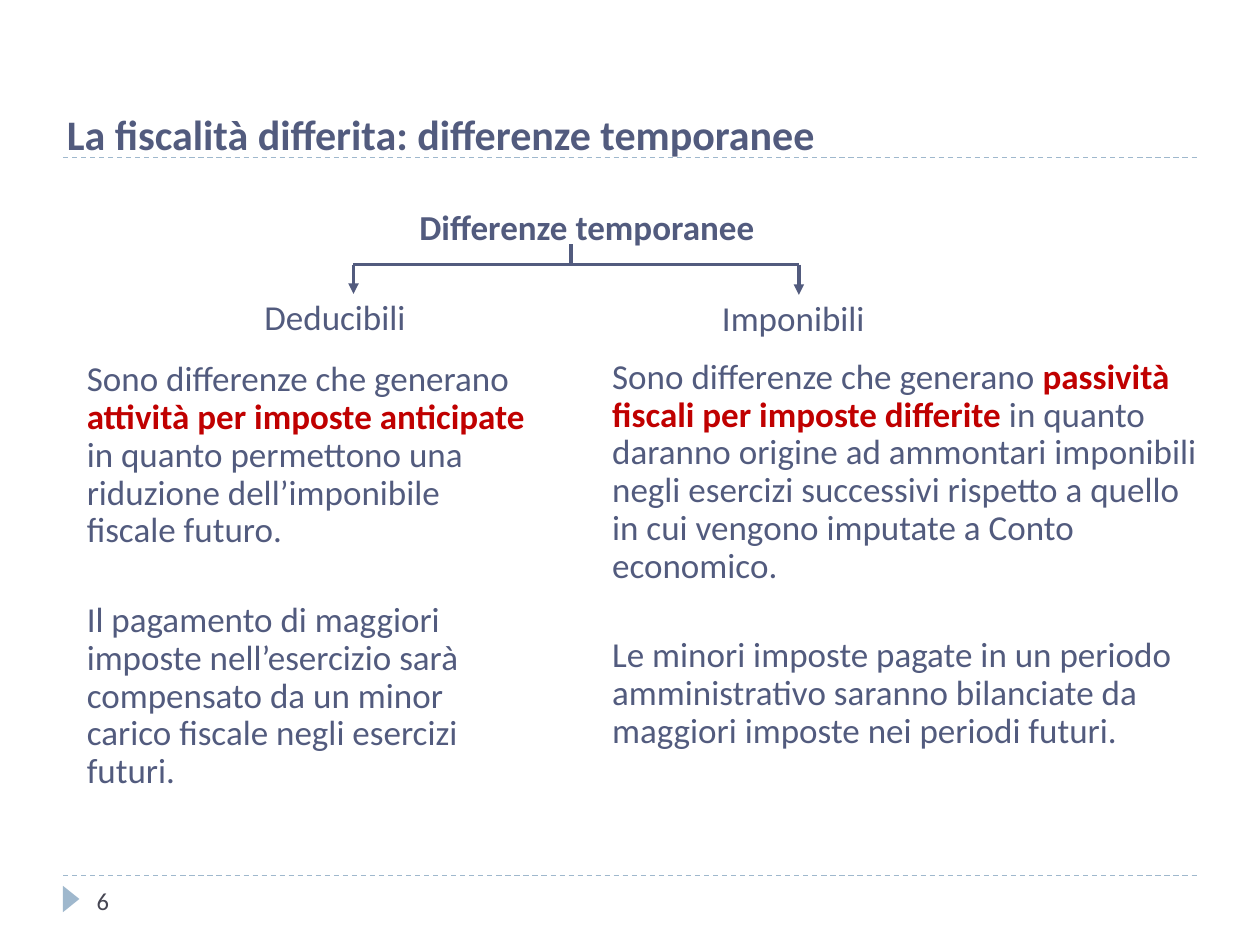
from typing import NamedTuple

from lxml import etree
from pptx import Presentation
from pptx.dml.color import RGBColor
from pptx.enum.dml import MSO_LINE
from pptx.enum.shapes import MSO_CONNECTOR, MSO_SHAPE
from pptx.enum.text import MSO_ANCHOR, MSO_AUTO_SIZE, PP_ALIGN
from pptx.oxml.ns import qn
from pptx.util import Pt

STRAIGHT = MSO_CONNECTOR.STRAIGHT
DASH = MSO_LINE.DASH
TRIANGLE = MSO_SHAPE.ISOSCELES_TRIANGLE
TOP, MIDDLE = MSO_ANCHOR.TOP, MSO_ANCHOR.MIDDLE
LEFT = PP_ALIGN.LEFT
FIXED = MSO_AUTO_SIZE.NONE

NAVY = RGBColor(0x52, 0x5B, 0x7E)
RED = RGBColor(0xC0, 0x00, 0x00)
PALE = RGBColor(0x9F, 0xB8, 0xCD)
GREY = RGBColor(0x46, 0x46, 0x53)
FONT = "Calibri"
GAP = 29.6


class Box(NamedTuple):
    left: float
    top: float
    width: float
    height: float


class Branch(NamedTuple):
    label: str
    head: Box
    body: Box
    start: str
    key: str
    rest: str
    close: str


BRANCHES = [
    Branch("Deducibili", Box(144, 168, 116, 28), Box(42.5, 203, 265, 254),
           "Sono differenze che generano ",
           "attività per imposte anticipate ",
           "in quanto permettono una riduzione dell’imponibile fiscale futuro.",
           "Il pagamento di maggiori imposte nell’esercizio sarà compensato "
           "da un minor carico fiscale negli esercizi futuri."),
    Branch("Imponibili", Box(405.5, 168.5, 102, 34), Box(342.7, 201.6, 351.4, 215),
           "Sono differenze che generano ",
           "passività fiscali per imposte differite",
           " in quanto daranno origine ad ammontari imponibili negli esercizi "
           "successivi rispetto a quello in cui vengono imputate a Conto economico.",
           "Le minori imposte pagate in un periodo amministrativo saranno "
           "bilanciate da maggiori imposte nei periodi futuri."),
]


def style(run, size: float = 20, color: RGBColor = NAVY, bold: bool = False) -> None:
    font = run.font
    font.name, font.size, font.bold = FONT, Pt(size), bold
    font.color.rgb = color


def place(shape, box: Box) -> None:
    shape.left, shape.top, shape.width, shape.height = map(Pt, box)


def add_text(slide, box: Box, text: str = "", size: float = 20,
             color: RGBColor = NAVY, bold: bool = False,
             anchor: MSO_ANCHOR = TOP, pitch: float = 0.9):
    shape = slide.shapes.add_textbox(*map(Pt, box))
    frame = shape.text_frame
    frame.word_wrap = True
    frame.vertical_anchor = anchor
    frame.text = text
    para = frame.paragraphs[0]
    para.line_spacing = pitch
    for run in para.runs:
        style(run, size, color, bold)
    return shape


def add_body(slide, item: Branch) -> None:
    frame = add_text(slide, item.body).text_frame
    first = frame.paragraphs[0]
    for text, color in ((item.start, NAVY), (item.key, RED), (item.rest, NAVY)):
        run = first.add_run()
        run.text = text
        style(run, color=color, bold=color == RED)
    last = frame.add_paragraph()
    last.text = item.close
    last.line_spacing = 0.9
    last.space_before = Pt(GAP)
    style(last.runs[0])


def add_line(slide, x1: float, y1: float, x2: float, y2: float,
             color: RGBColor = NAVY, width: float = 2):
    line = slide.shapes.add_connector(STRAIGHT, Pt(x1), Pt(y1), Pt(x2), Pt(y2))
    line.line.color.rgb = color
    line.line.width = Pt(width)
    etree.SubElement(line._element.spPr, qn("a:effectLst"))
    return line


def add_arrow(slide, x: float, y: float, goal) -> None:
    line = add_line(slide, x, y, x, goal.top.pt)
    line.end_connect(goal, 0)
    etree.SubElement(line.line._get_or_add_ln(), qn("a:tailEnd"), type="triangle")


def add_frame(slide) -> None:
    for y in (90, 500.4):
        add_line(slide, 36, y, 684, y, PALE, 0.75).line.dash_style = DASH
    mark = slide.shapes.add_shape(TRIANGLE, Pt(33.1), Pt(509), Pt(15.1), Pt(9.4))
    mark.rotation = 90
    mark.shadow.inherit = False
    mark.fill.solid()
    mark.fill.fore_color.rgb = PALE
    mark.line.fill.background()
    add_text(slide, Box(48.2, 500.4, 156, 28.8), "6", 14, GREY,
             anchor=MIDDLE, pitch=1)


def add_title(slide) -> None:
    title = slide.shapes.title
    place(title, Box(31, 58.3, 641.5, 36))
    frame = title.text_frame
    frame.text = "La fiscalità differita: differenze temporanee"
    frame.auto_size = FIXED
    frame.vertical_anchor = MIDDLE
    para = frame.paragraphs[0]
    para.alignment = LEFT
    style(para.runs[0], 24, bold=True)


def add_tree(slide) -> None:
    add_text(slide, Box(232.6, 116.6, 244, 34), "Differenze temporanee", bold=True)
    bar = 151.2
    ends = [item.head.left + item.head.width / 2 for item in BRANCHES]
    add_line(slide, 326.2, 139.7, 326.2, bar)
    add_line(slide, ends[0], bar, ends[1], bar)
    for item, x in zip(BRANCHES, ends):
        head = add_text(slide, item.head, item.label)
        add_arrow(slide, x, bar, head)
        add_body(slide, item)


def main() -> None:
    deck = Presentation()
    deck.slide_width, deck.slide_height = Pt(720), Pt(540)
    slide = deck.slides.add_slide(deck.slide_layouts[5])
    add_frame(slide)
    add_title(slide)
    add_tree(slide)
    deck.save("out.pptx")


if __name__ == "__main__":
    main()
